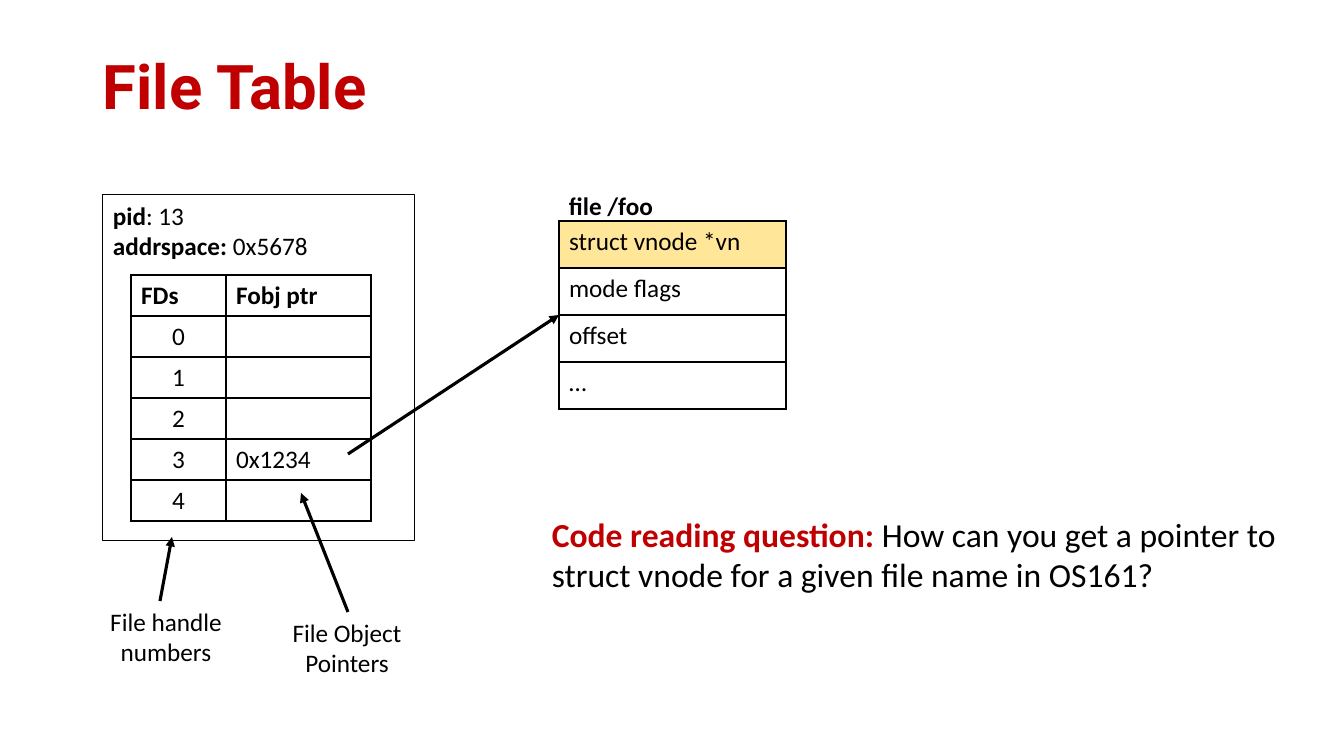
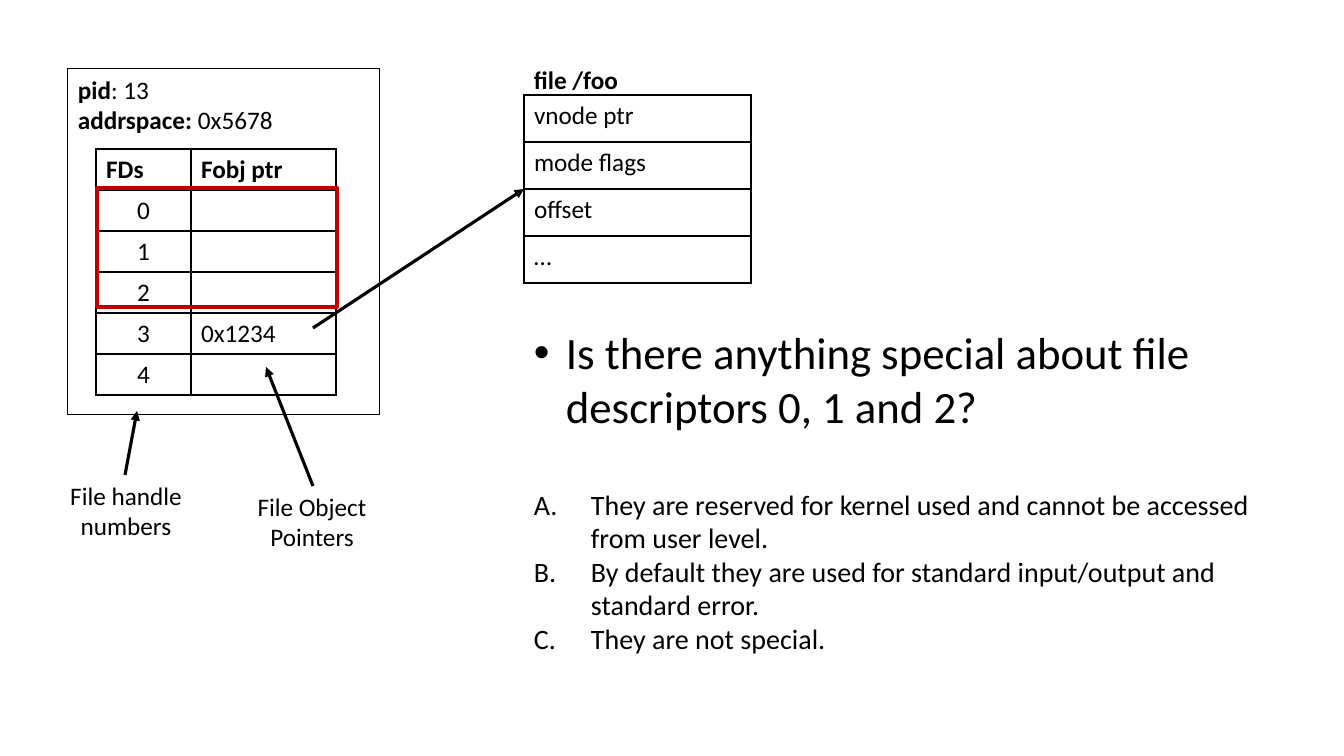
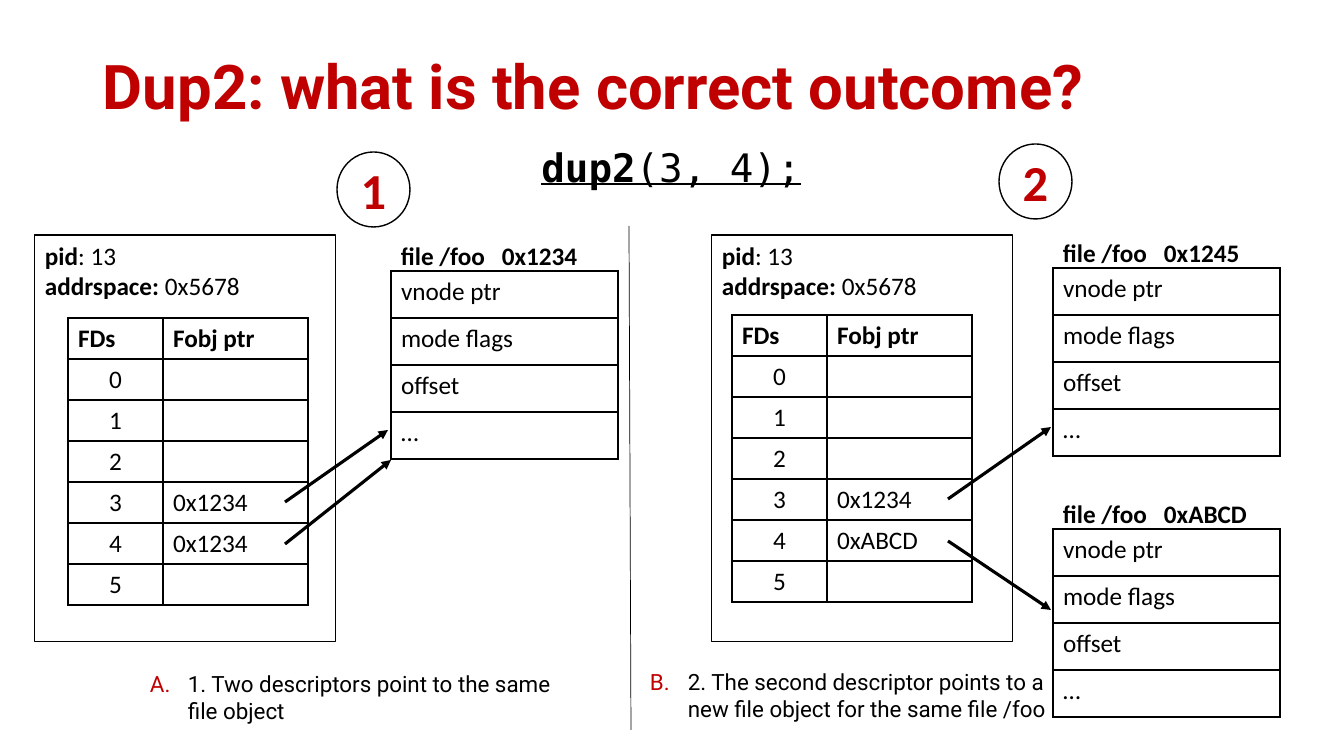
from lxml import etree
from pptx import Presentation
from pptx.dml.color import RGBColor
from pptx.enum.shapes import MSO_CONNECTOR, MSO_SHAPE
from pptx.enum.text import MSO_ANCHOR, PP_ALIGN
from pptx.oxml import parse_xml
from pptx.oxml.ns import nsdecls, qn
from pptx.util import Pt

PX = 9071  # EMU per px
BLACK = RGBColor(0x00, 0x00, 0x00)
RED = RGBColor(0xC0, 0x00, 0x00)
YELLOW = RGBColor(0xFF, 0xE6, 0x99)
BODY, HEAD, CODE = "Calibri", "Roboto", "DejaVu Sans Mono"
LEFT, CENTER = PP_ALIGN.LEFT, PP_ALIGN.CENTER
TOP, MIDDLE = MSO_ANCHOR.TOP, MSO_ANCHOR.MIDDLE
RECT, OVAL = MSO_SHAPE.RECTANGLE, MSO_SHAPE.OVAL
STRAIGHT = MSO_CONNECTOR.STRAIGHT

FD_COLS, FD_ROW = (95, 145), 41
OBJECT_COLS, OBJECT_ROW = (227,), 47
TITLE_BOX = (93, 17, 1159, 146)
PROCESS_TEXT = [
    [("pid", True, BLACK), (": 13", False, BLACK)],
    [("addrspace:", True, BLACK), (" 0x5678", False, BLACK)],
]


def write(tf, paragraphs, size, align=LEFT, font=BODY):
    """Fill a text frame; each paragraph is a list of (text, bold, color) runs."""
    tf.word_wrap = True
    for i, runs in enumerate(paragraphs):
        p = tf.add_paragraph() if i else tf.paragraphs[0]
        p.alignment = align
        for text, bold, color in runs:
            r = p.add_run()
            r.text = text
            r.font.name, r.font.size, r.font.bold = font, Pt(size), bold
            r.font.color.rgb = color


def add_grid(s, x, y, widths, row_height, rows, header=False):
    """Add a plain black-bordered table; digits are centred."""
    height = row_height * len(rows)
    table = s.shapes.add_table(len(rows), len(widths), x * PX, y * PX,
                               sum(widths) * PX, height * PX).table
    table.first_row = table.horz_banding = False
    for col, width in zip(table.columns, widths):
        col.width = width * PX
    for i, row in enumerate(rows):
        table.rows[i].height = row_height * PX
        for j, text in enumerate(row):
            cell = table.cell(i, j)
            if text:
                align = CENTER if text.isdigit() else LEFT
                write(cell.text_frame, [[(text, header and i == 0, BLACK)]], 18, align)
            tcPr = cell._tc.get_or_add_tcPr()
            for side in ("lnL", "lnR", "lnT", "lnB"):
                tcPr.append(parse_xml(
                    f'<a:{side} {nsdecls("a")} w="12700"><a:solidFill>'
                    f'<a:srgbClr val="{BLACK}"/></a:solidFill></a:{side}>'))
            cell.fill.background()
    return table


prs = Presentation()
prs.slide_width, prs.slide_height = 1344 * PX, 756 * PX
blank = prs.slide_layouts[6]
intro, quiz, dup = [prs.slides.add_slide(blank) for _ in range(3)]

# Each entry: slide, box, paragraphs, size, alignment, font
texts = [
    (intro, (542, 509, 755, 92),
     [[("Code reading question: ", True, RED),
       ("How can you get a pointer to struct vnode for a given file name in OS161?",
        False, BLACK)]], 24, LEFT, BODY),
]
# Each entry: slide, frame, table position, pointers by descriptor
processes = [
    (dup, (35, 235, 301, 407), (68, 318), ["", "", "", "0x1234", "0x1234", ""]),
    (dup, (712, 235, 301, 407), (732, 315), ["", "", "", "0x1234", "0xABCD", ""]),
]
# Each entry: slide, table position, address, first field
objects = [
    (dup, (391, 271), "0x1234", "vnode ptr"),
    (dup, (1053, 268), "0x1245", "vnode ptr"),
    (dup, (1053, 529), "0xABCD", "vnode ptr"),
]
# Each entry: slide, ends, width, arrowhead
lines = [
    (dup, (285, 502, 388, 430), 2.25, True),
    (dup, (285, 544, 391, 460), 2.25, True),
    (dup, (948, 499, 1051, 427), 2.25, True),
    (dup, (948, 541, 1051, 610), 2.25, True),
    (dup, (629, 226, 631, 730), 0.5, False),
]

# The first two slides hold the same diagram, moved by (dx, dy)
for s, dx, dy, handle_x, field in ((intro, 0, 0, 98, "struct vnode *vn"),
                                   (quiz, -35, -126, 58, "vnode ptr")):
    processes.append((s, (103 + dx, 195 + dy, 312, 346), (131 + dx, 275 + dy),
                      ["", "", "", "0x1234", ""]))
    objects.append((s, (559 + dx, 221 + dy), "", field))
    for x, y, label in ((handle_x, 601 + dy, "File handle numbers"),
                        (279 + dx, 612 + dy, "File Object Pointers")):
        texts.append((s, (x, y, 136, 72), [[(label, False, BLACK)]], 18, CENTER, BODY))
    for x1, y1, x2, y2 in ((160, 601, 172, 537), (348, 612, 301, 493),
                           (348, 454, 559, 315)):
        lines.append((s, (x1 + dx, y1 + dy, x2 + dx, y2 + dy), 2.25, True))

# Titles
for s, title in ((intro, "File Table"), (dup, "Dup2: what is the correct outcome?")):
    tf = s.shapes.add_textbox(*[v * PX for v in TITLE_BOX]).text_frame
    write(tf, [[(title, True, RED)]], 44, font=HEAD)
    tf.vertical_anchor = MIDDLE
    tf.paragraphs[0].line_spacing = 0.9

# Descriptor and file object tables
for s, frame, (x, y), pointers in processes:
    rows = [("FDs", "Fobj ptr")] + [(str(n), ptr) for n, ptr in enumerate(pointers)]
    add_grid(s, x, y, FD_COLS, FD_ROW, rows, header=True)

for s, (x, y), address, field in objects:
    fields = [(field,), ("mode flags",), ("offset",), ("…",)]
    table = add_grid(s, x, y, OBJECT_COLS, OBJECT_ROW, fields)
    if s is intro:
        table.cell(0, 0).fill.solid()
        table.cell(0, 0).fill.fore_color.rgb = YELLOW
    tf = s.shapes.add_textbox(x * PX, (y - 36) * PX, 215 * PX, 40 * PX).text_frame
    caption = f"file /foo\t{address}" if address else "file /foo"
    write(tf, [[(caption, True, BLACK)]], 18)
    if address:
        tabs = etree.SubElement(tf.paragraphs[0]._p.get_or_add_pPr(), qn("a:tabLst"))
        etree.SubElement(tabs, qn("a:tab"), pos=str(101 * PX), algn="l")

# Outlined shapes: process frames, highlight, option numbers
outlines = [(s, RECT, frame, BLACK, 0.75, PROCESS_TEXT, 18, LEFT, TOP)
            for s, frame, _, _ in processes]
outlines.append((quiz, RECT, (97, 188, 240, 119), RED, 3, [], 18, LEFT, TOP))
for number, x, y in (("1", 337, 152), ("2", 999, 144)):
    outlines.append((dup, OVAL, (x, y, 73, 75), BLACK, 1,
                     [[(number, True, RED)]], 36, CENTER, MIDDLE))
for s, kind, box, color, width, paragraphs, size, align, anchor in outlines:
    sp = s.shapes.add_shape(kind, *[v * PX for v in box])
    sp.shadow.inherit = False
    sp.fill.background()
    sp.line.color.rgb = color
    sp.line.width = Pt(width)
    write(sp.text_frame, paragraphs, size, align)
    sp.text_frame.vertical_anchor = anchor

# Arrows and divider
for s, ends, width, arrow in lines:
    cxn = s.shapes.add_connector(STRAIGHT, *[v * PX for v in ends])
    cxn.line.color.rgb = BLACK
    cxn.line.width = Pt(width)
    if arrow:
        etree.SubElement(cxn.line._get_or_add_ln(), qn("a:tailEnd"), type="triangle")
    etree.SubElement(cxn._element.spPr, qn("a:effectLst"))

# Plain text
for s, box, paragraphs, size, align, font in texts:
    tf = s.shapes.add_textbox(*[v * PX for v in box]).text_frame
    write(tf, paragraphs, size, align, font)

tf = dup.shapes.add_textbox(263 * PX, 138 * PX, 816 * PX, 57 * PX).text_frame
write(tf, [[("dup2", True, BLACK), ("(3, 4);", False, BLACK)]], 28, CENTER, CODE)
for r in tf.paragraphs[0].runs:
    r.font.underline = True

# Lists; each item: text, size, indent, bullet element and its attributes
dot = ("a:buChar", {"char": "•"})
letter = ("a:buAutoNum", {"type": "alphaUcPeriod"})
letter_b = ("a:buAutoNum", {"type": "alphaUcPeriod", "startAt": "2"})
lists = [
    (quiz, (524, 320, 741, 383), BODY, BLACK, [
        ("Is there anything special about file descriptors 0, 1 and 2?", 32, 32, dot),
        ("They are reserved for kernel used and cannot be accessed from user level.",
         20, 57, letter),
        ("By default they are used for standard input/output and standard error.",
         20, 57, letter),
        ("They are not special.", 20, 57, letter)]),
    (dup, (140, 665, 450, 65), HEAD, RED, [
        ("1. Two descriptors point to the same file object", 16, 38, letter)]),
    (dup, (640, 663, 450, 65), HEAD, RED, [
        ("2. The second descriptor points to a new file object for the same file /foo",
         16, 38, letter_b)]),
]
for s, box, font, bullet_color, items in lists:
    tf = s.shapes.add_textbox(*[v * PX for v in box]).text_frame
    write(tf, [[(text, False, BLACK)] for text, *_ in items], 20, font=font)
    for p, (_, size, indent, (tag, attributes)) in zip(tf.paragraphs, items):
        p.runs[0].font.size = Pt(size)
        pPr = p._p.get_or_add_pPr()
        pPr.set("marL", str(indent * PX))
        pPr.set("indent", str(-indent * PX))
        clr = etree.SubElement(pPr, qn("a:buClr"))
        etree.SubElement(clr, qn("a:srgbClr"), val=str(bullet_color))
        if tag == "a:buChar":
            etree.SubElement(pPr, qn("a:buFont"), typeface="Arial")
        etree.SubElement(pPr, qn(tag), attributes)
    if len(items) > 1:
        tf.paragraphs[1].space_before = Pt(39)

prs.save("out.pptx")
